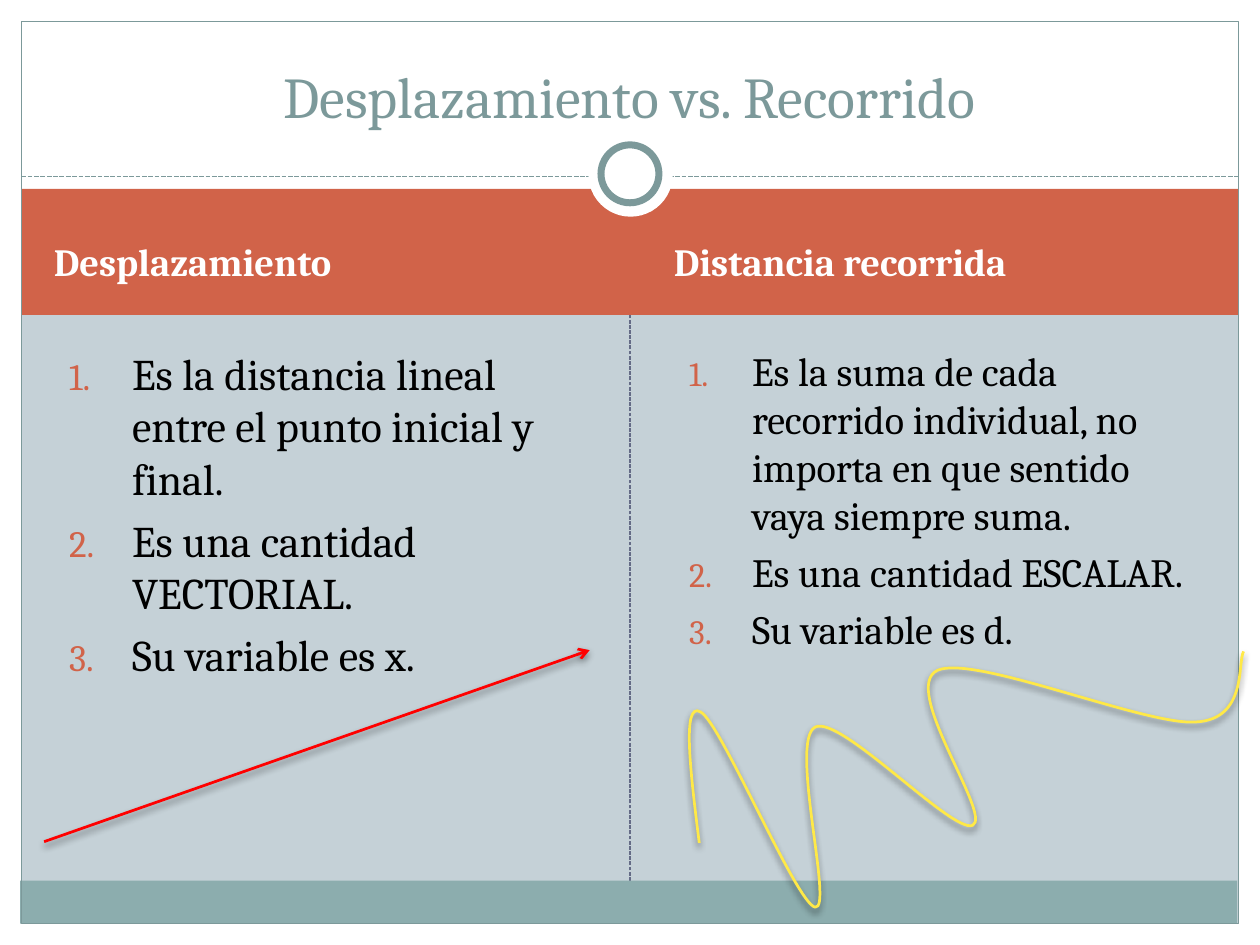
from lxml.etree import SubElement
from pptx import Presentation
from pptx.dml.color import RGBColor
from pptx.enum.dml import MSO_LINE
from pptx.enum.shapes import MSO_CONNECTOR, MSO_SHAPE
from pptx.enum.text import MSO_ANCHOR, PP_ALIGN
from pptx.oxml.ns import qn
from pptx.util import Inches, Pt

COLORS = {
    "background": "C5D1D7", "white": "FFFFFF", "black": "000000",
    "orange": "D16349", "teal": "8CADAE", "slate": "7C999A",
    "divider": "646B86", "arrow": "FF0000", "curve": "FFE947",
}


def color(name):
    return RGBColor.from_string(COLORS[name])


def add_xml(parent, tag, **attributes):
    element = SubElement(parent, qn(tag))
    for name, value in attributes.items():
        element.set(name, str(value))
    return element


class SlideBuilder:
    font_name = "Cambria"

    def __init__(self, slide):
        self.slide = slide
        self.slide.background.fill.solid()
        self.slide.background.fill.fore_color.rgb = color("background")

    def style_line(self, line, name, width, dash=None):
        line.color.rgb = color(name)
        line.width = Pt(width)
        if dash:
            line.dash_style = dash

    def set_effects(self, shape, shadow):
        """Replace the theme shadow by a soft one below, or by none."""
        effects = add_xml(shape._element.spPr, "a:effectLst")
        if shadow:
            outer = add_xml(effects, "a:outerShdw", blurRad=Pt(4), dist=Pt(2),
                            dir=5400000, algn="ctr", rotWithShape=0)
            black = add_xml(outer, "a:srgbClr", val=COLORS["black"])
            add_xml(black, "a:alpha", val=45000)

    def shape(self, kind, left, top, width, height, fill=None, line=None):
        shape = self.slide.shapes.add_shape(
            kind, Inches(left), Inches(top), Inches(width), Inches(height))
        shape.shadow.inherit = False
        if fill:
            shape.fill.solid()
            shape.fill.fore_color.rgb = color(fill)
        else:
            shape.fill.background()
        if line:
            self.style_line(shape.line, *line)
        else:
            shape.line.fill.background()

    def line(self, start, end, name, width, dash=None, arrow=False):
        connector = self.slide.shapes.add_connector(
            MSO_CONNECTOR.STRAIGHT, *map(Inches, start + end))
        self.style_line(connector.line, name, width, dash)
        if arrow:
            add_xml(connector.line._get_or_add_ln(), "a:tailEnd", type="arrow")
        self.set_effects(connector, shadow=arrow)

    def curve(self, points, name, width):
        """Draw a Bézier path: a start, then three points per segment."""
        start, *rest = [(Inches(x), Inches(y)) for x, y in points]
        builder = self.slide.shapes.build_freeform(*start)
        builder.add_line_segments(rest, close=False)
        shape = builder.convert_to_shape()
        shape.fill.background()
        self.style_line(shape.line, name, width)
        self.set_effects(shape, shadow=True)
        path = next(shape._element.iter(qn("a:path")))
        path.set("fill", "none")
        segments = path.findall(qn("a:lnTo"))
        for index, segment in enumerate(segments):
            if index % 3 == 0:
                bezier = add_xml(path, "a:cubicBezTo")
            bezier.append(segment[0])
            path.remove(segment)

    def text(self, box, paragraphs, size, name, anchor=MSO_ANCHOR.TOP,
             align=PP_ALIGN.LEFT, bold=False, space=0, numbered=False):
        frame = self.slide.shapes.add_textbox(*map(Inches, box)).text_frame
        frame.word_wrap = True
        frame.vertical_anchor = anchor
        font_format = {"name": self.font_name, "size": Pt(size), "bold": bold}
        for index, text in enumerate(paragraphs):
            paragraph = frame.add_paragraph() if index else frame.paragraphs[0]
            paragraph.alignment = align
            paragraph.space_before = Pt(size * space)
            run = paragraph.add_run()
            run.text = text
            for attribute, value in font_format.items():
                setattr(run.font, attribute, value)
            run.font.color.rgb = color(name)
            if numbered:
                self.number(paragraph)

    def number(self, paragraph):
        properties = paragraph._p.get_or_add_pPr()
        properties.set("marL", str(Inches(0.62)))
        properties.set("indent", str(Inches(-0.5)))
        bullet_color = add_xml(properties, "a:buClr")
        add_xml(bullet_color, "a:srgbClr", val=COLORS["orange"])
        add_xml(properties, "a:buSzPct", val=85000)
        add_xml(properties, "a:buFont", typeface=self.font_name)
        add_xml(properties, "a:buAutoNum", type="arabicPeriod")


def draw_frame(builder):
    rectangle, oval = MSO_SHAPE.RECTANGLE, MSO_SHAPE.OVAL
    dash = MSO_LINE.SQUARE_DOT
    builder.line((5, 6.99), (5, 2.41), "divider", 0.75, dash)
    for box in ((0, 0, 10, 1.58), (0, 7.33, 10, 0.17),
                (0, 0, 0.17, 7.5), (9.83, 0, 0.17, 7.5)):
        builder.shape(rectangle, *box, fill="white")
    builder.shape(rectangle, 0.17, 1.5, 9.66, 1, fill="orange")
    builder.shape(rectangle, 0.16, 6.99, 9.66, 0.34, fill="teal")
    builder.line((0.17, 1.4), (9.83, 1.4), "slate", 0.9, dash)
    builder.shape(rectangle, 0.17, 0.17, 9.66, 7.16, line=("slate", 0.75))
    builder.shape(oval, 4.67, 1.05, 0.67, 0.67, fill="white")
    builder.shape(oval, 4.77, 1.15, 0.46, 0.46, fill="white", line=("slate", 4))


def main():
    presentation = Presentation()
    presentation.slide_width = Inches(10)
    presentation.slide_height = Inches(7.5)
    builder = SlideBuilder(
        presentation.slides.add_slide(presentation.slide_layouts[6]))
    draw_frame(builder)

    columns = (
        (0.33, "Desplazamiento", 25, (
            "Es la distancia lineal entre el punto inicial y final.",
            "Es una cantidad VECTORIAL.",
            "Su variable es x.")),
        (5.25, "Distancia recorrida", 22.9, (
            "Es la suma de cada recorrido individual, no importa en que "
            "sentido vaya siempre suma.",
            "Es una cantidad ESCALAR.",
            "Su variable es d.")),
    )
    for left, heading, size, items in columns:
        builder.text((left, 1.67, 4.42, 0.8), [heading], 22, "white",
                     anchor=MSO_ANCHOR.MIDDLE, bold=True, space=0.22)
        builder.text((left, 2.7, 4.42, 2.4), items, size, "black",
                     space=0.22, numbered=True)
    builder.text((0.33, 0.25, 9.33, 0.83), ["Desplazamiento vs. Recorrido"],
                 33, "slate", anchor=MSO_ANCHOR.BOTTOM, align=PP_ALIGN.CENTER)

    builder.curve((
        (5.55, 6.69),
        (5.48, 6.13), (5.41, 5.56), (5.56, 5.65),
        (5.72, 5.73), (6.32, 7.17), (6.47, 7.2),
        (6.62, 7.22), (6.26, 5.88), (6.47, 5.77),
        (6.67, 5.67), (7.56, 6.62), (7.72, 6.55),
        (7.88, 6.47), (7.14, 5.46), (7.44, 5.32),
        (7.73, 5.19), (9.09, 5.76), (9.49, 5.73),
        (9.9, 5.71), (9.82, 5.26), (9.87, 5.17),
    ), "curve", 1.57)
    builder.line((0.35, 6.68), (4.68, 5.16), "arrow", 1.57, arrow=True)
    presentation.save("out.pptx")


if __name__ == "__main__":
    main()
